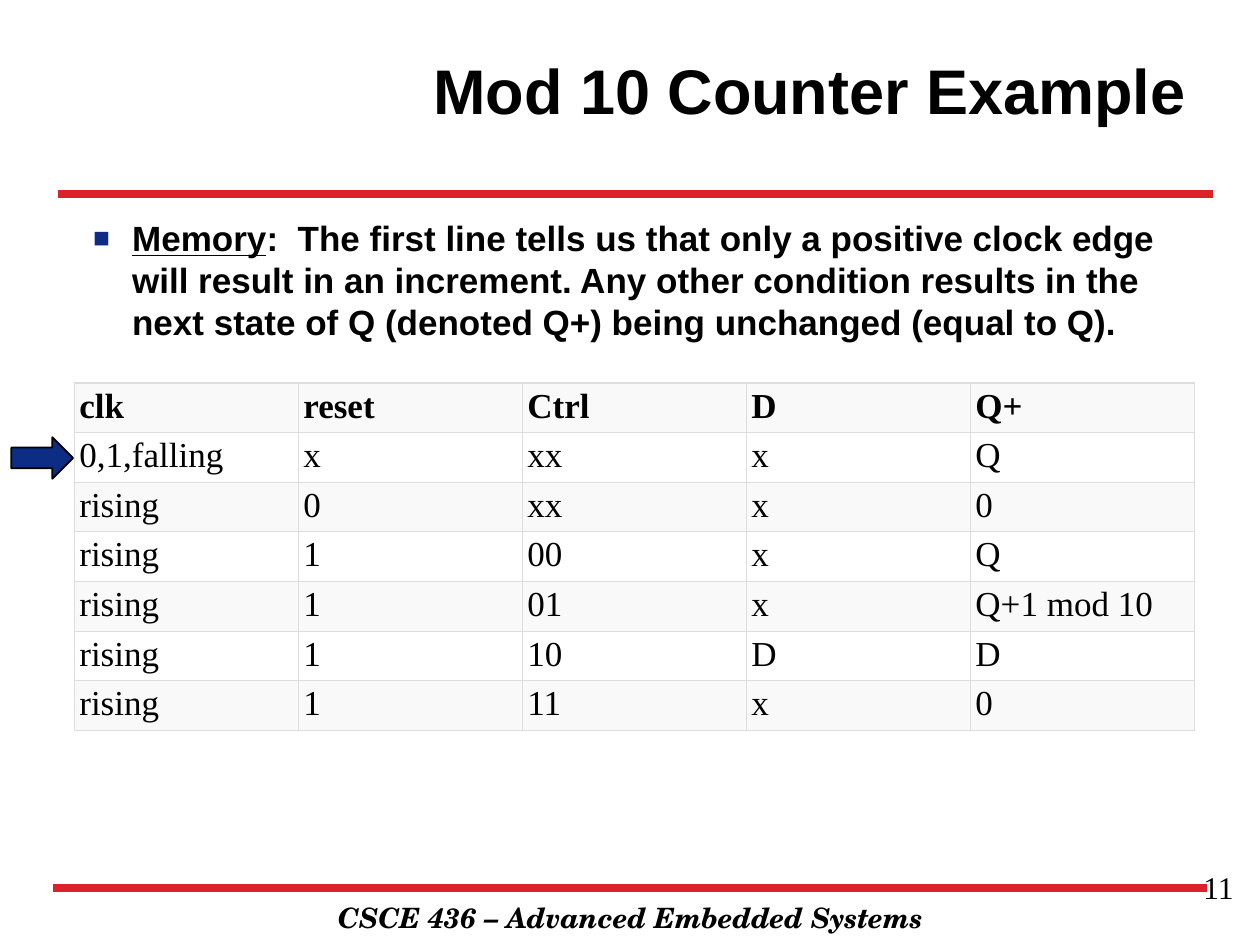
from lxml import etree
from pptx import Presentation
from pptx.dml.color import RGBColor
from pptx.enum.shapes import MSO_CONNECTOR, MSO_SHAPE
from pptx.enum.text import MSO_ANCHOR, PP_ALIGN
from pptx.oxml.ns import qn
from pptx.util import Inches, Pt

STRAIGHT = MSO_CONNECTOR.STRAIGHT
RIGHT_ARROW = MSO_SHAPE.RIGHT_ARROW
TOP, MIDDLE = MSO_ANCHOR.TOP, MSO_ANCHOR.MIDDLE
LEFT, CENTER, RIGHT = PP_ALIGN.LEFT, PP_ALIGN.CENTER, PP_ALIGN.RIGHT

GRID_COLUMNS, GRID_ROWS = 100, 75
GRID_UNIT = Inches(0.1)
COLORS = {
    "ink": "000000",
    "rule": "DD212B",
    "accent": "0C2D83",
    "border": "DDDDDD",
    "band": "F9F9F9",
    "plain": "FFFFFF",
}
SANS, SERIF, SCHOOL = "Arial", "Times New Roman", "TeX Gyre Schola"
TRUTH_TABLE = [
    ["clk", "reset", "Ctrl", "D", "Q+"],
    ["0,1,falling", "x", "xx", "x", "Q"],
    ["rising", "0", "xx", "x", "0"],
    ["rising", "1", "00", "x", "Q"],
    ["rising", "1", "01", "x", "Q+1 mod 10"],
    ["rising", "1", "10", "D", "D"],
    ["rising", "1", "11", "x", "0"],
]


def grid(*steps):
    return [round(step * GRID_UNIT) for step in steps]


def color(name):
    return RGBColor.from_string(COLORS[name])


def add_run(paragraph, text, face, size, bold=False, italic=False, underline=False):
    run = paragraph.add_run()
    run.text = text
    font = run.font
    font.name, font.size = face, Pt(size)
    font.bold, font.italic, font.underline = bold, italic, underline
    font.color.rgb = color("ink")


def add_text(slide, area, align=LEFT, anchor=TOP):
    frame = slide.shapes.add_textbox(*grid(*area)).text_frame
    frame.word_wrap = True
    frame.vertical_anchor = anchor
    paragraph = frame.paragraphs[0]
    paragraph.alignment = align
    return paragraph


def add_square_bullet(paragraph):
    properties = paragraph._p.get_or_add_pPr()
    indent = Inches(0.31)
    properties.set("marL", str(indent))
    properties.set("indent", str(-indent))
    bullet_color = etree.SubElement(properties, qn("a:buClr"))
    etree.SubElement(bullet_color, qn("a:srgbClr"), val=COLORS["accent"])
    etree.SubElement(properties, qn("a:buSzPct"), val="80000")
    etree.SubElement(properties, qn("a:buFont"), typeface=SANS)
    etree.SubElement(properties, qn("a:buChar"), char="■")


def add_rule(slide, start, end, row):
    rule = slide.shapes.add_connector(STRAIGHT, *grid(start, row, end, row))
    rule.line.color.rgb = color("rule")
    rule.line.width = Pt(4.5)
    etree.SubElement(rule._element.spPr, qn("a:effectLst"))


def add_row_pointer(slide, area):
    pointer = slide.shapes.add_shape(RIGHT_ARROW, *grid(*area))
    pointer.shadow.inherit = False
    pointer.fill.solid()
    pointer.fill.fore_color.rgb = color("accent")
    pointer.line.color.rgb = color("ink")
    pointer.line.width = Pt(1)


def add_borders(cell):
    properties = cell._tc.get_or_add_tcPr()
    for position, side in enumerate(("lnL", "lnR", "lnT", "lnB")):
        border = etree.Element(qn(f"a:{side}"), w=str(Pt(0.75)))
        fill = etree.SubElement(border, qn("a:solidFill"))
        etree.SubElement(fill, qn("a:srgbClr"), val=COLORS["border"])
        properties.insert(position, border)


def add_truth_table(slide, area):
    row_count, column_count = len(TRUTH_TABLE), len(TRUTH_TABLE[0])
    table = slide.shapes.add_table(row_count, column_count, *grid(*area)).table
    for row_index, values in enumerate(TRUTH_TABLE):
        for column_index, value in enumerate(values):
            cell = table.cell(row_index, column_index)
            cell.margin_left = cell.margin_right = Inches(0.04)
            cell.margin_top = cell.margin_bottom = Inches(0.03)
            cell.fill.solid()
            cell.fill.fore_color.rgb = color("plain" if row_index % 2 else "band")
            add_borders(cell)
            add_run(cell.text_frame.paragraphs[0], value, SERIF, 20, bold=row_index == 0)


def main():
    deck = Presentation()
    deck.slide_width, deck.slide_height = grid(GRID_COLUMNS, GRID_ROWS)
    slide = deck.slides.add_slide(deck.slide_layouts[6])

    footer = add_text(slide, (14.2, 71, 71.7, 3.7), CENTER)
    add_run(footer, "CSCE 436 – Advanced Embedded Systems", SCHOOL, 16, bold=True, italic=True)
    add_rule(slide, 4.2, 95.8, 70.5)
    add_rule(slide, 4.6, 96.3, 15.4)

    title = add_text(slide, (20.9, 0.8, 74.2, 12.5), RIGHT, MIDDLE)
    add_run(title, "Mod 10 Counter Example", SANS, 36, bold=True)

    memory_note = add_text(slide, (6.4, 16.7, 88.9, 47.3))
    add_square_bullet(memory_note)
    add_run(memory_note, "Memory", SANS, 20, bold=True, underline=True)
    add_run(
        memory_note,
        ":  The first line tells us that only a positive clock edge will result in "
        "an increment. Any other condition results in the next state of Q "
        "(denoted Q+) being unchanged (equal to Q).",
        SANS, 20, bold=True,
    )

    page_number = add_text(slide, (75.6, 68.4, 23.3, 5.2), RIGHT)
    add_run(page_number, "11", SERIF, 18)

    add_row_pointer(slide, (0.9, 34.7, 4.9, 3.3))
    add_truth_table(slide, (5.9, 30.4, 88.9, 25.9))
    deck.save("out.pptx")


if __name__ == "__main__":
    main()
